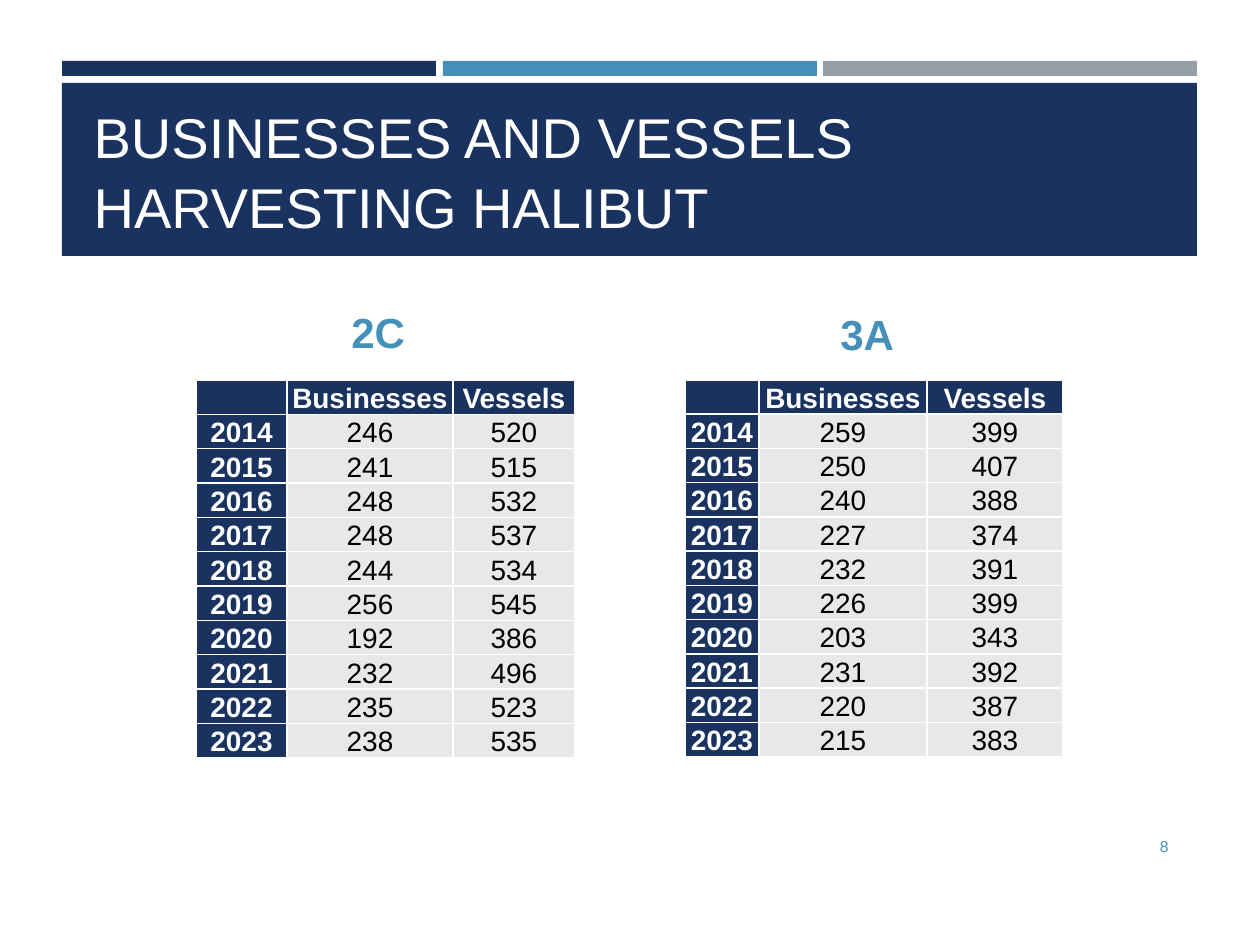
from lxml.etree import SubElement
from pptx import Presentation
from pptx.dml.color import RGBColor
from pptx.enum.shapes import MSO_SHAPE as Shape
from pptx.enum.text import MSO_ANCHOR as Anchor, PP_ALIGN as Align
from pptx.oxml import parse_xml
from pptx.oxml.ns import nsdecls, qn
from pptx.util import Emu, Pt

NAVY, BLUE, GRAY = "1A3260", "4590B8", "969FA7"
PALE, WHITE, BLACK = "E8E8EA", "FFFFFF", "000000"

YEARS = range(2014, 2024)
HARVEST_2C = [(246, 520), (241, 515), (248, 532), (248, 537), (244, 534),
              (256, 545), (192, 386), (232, 496), (235, 523), (238, 535)]
HARVEST_3A = [(259, 399), (250, 407), (240, 388), (227, 374), (232, 391),
              (226, 399), (203, 343), (231, 392), (220, 387), (215, 383)]


def px(length):
    """Turn pixels, at 126 to the inch, into EMU."""
    return Emu(round(length * 914400 / 126))


def color(hex_code):
    return RGBColor.from_string(hex_code)


class SlideBuilder:
    font_name = "Arial"

    def __init__(self, deck):
        self.slide = deck.slides.add_slide(deck.slide_layouts[5])

    def format_text(self, paragraph, size, hex_code, bold=False, align=Align.LEFT):
        paragraph.alignment = align
        for run in paragraph.runs:
            run.font.name = self.font_name
            run.font.size = Pt(size)
            run.font.bold = bold
            run.font.color.rgb = color(hex_code)

    def bar(self, left, top, width, height, fill):
        bar = self.slide.shapes.add_shape(
            Shape.RECTANGLE, px(left), px(top), px(width), px(height))
        bar.shadow.inherit = False
        bar.fill.solid()
        bar.fill.fore_color.rgb = color(fill)
        bar.line.fill.background()

    def title(self, text, left, top, width, height):
        """Fill the title placeholder and bring it in front of the bars."""
        title = self.slide.shapes.title
        title.left, title.top = px(left), px(top)
        title.width, title.height = px(width), px(height)
        frame = title.text_frame
        frame.text = text
        frame.word_wrap = True
        frame.vertical_anchor = Anchor.MIDDLE
        frame.paragraphs[0].line_spacing = 1.04
        self.format_text(frame.paragraphs[0], 32, WHITE)
        title.element.getparent().append(title.element)

    def label(self, text, left, top, width, height, size, anchor, **style):
        frame = self.slide.shapes.add_textbox(
            px(left), px(top), px(width), px(height)).text_frame
        frame.text = text
        frame.word_wrap = True
        frame.vertical_anchor = anchor
        self.format_text(frame.paragraphs[0], size, BLUE, **style)

    def border(self, cell):
        """Draw a thin white line on all four sides of a cell."""
        properties = cell._tc.get_or_add_tcPr()
        for position, side in enumerate(("lnL", "lnR", "lnT", "lnB")):
            line = parse_xml(f'<a:{side} {nsdecls("a")} w="12700"/>')
            fill = SubElement(line, qn("a:solidFill"))
            SubElement(fill, qn("a:srgbClr"), val=WHITE)
            properties.insert(position, line)

    def cell(self, cell, text, is_heading):
        cell.margin_left = cell.margin_right = px(1)
        cell.margin_top = cell.margin_bottom = 0
        cell.vertical_anchor = Anchor.BOTTOM
        cell.fill.solid()
        cell.fill.fore_color.rgb = color(NAVY if is_heading else PALE)
        self.border(cell)
        cell.text_frame.text = text
        paragraph = cell.text_frame.paragraphs[0]
        self.format_text(paragraph, 16, WHITE if is_heading else BLACK,
                         is_heading, Align.CENTER)
        if not text:
            # Keeps the empty corner from stretching the header row.
            SubElement(paragraph._p, qn("a:endParaRPr"), sz="1600")

    def harvest_table(self, left, top, height, column_widths, harvest):
        rows = [("", "Businesses", "Vessels")]
        rows += [(year, *counts) for year, counts in zip(YEARS, harvest)]
        table = self.slide.shapes.add_table(
            len(rows), len(column_widths), px(left), px(top),
            px(sum(column_widths)), px(height)).table
        for column, width in zip(table.columns, column_widths):
            column.width = px(width)
        for r, row in enumerate(rows):
            for c, value in enumerate(row):
                self.cell(table.cell(r, c), str(value), r == 0 or c == 0)


def main():
    deck = Presentation()
    deck.slide_width, deck.slide_height = px(1260), px(945)
    page = SlideBuilder(deck)

    for left, fill in zip((62, 443, 823), (NAVY, BLUE, GRAY)):
        page.bar(left, 61, 374, 15, fill)
    page.bar(62, 83, 1135, 173, NAVY)
    page.title("BUSINESSES AND VESSELS HARVESTING HALIBUT", 81, 95, 1101, 149)

    page.label("2C", 339, 284, 93, 79, 24, Anchor.BOTTOM, bold=True)
    page.harvest_table(196, 380, 378, (91, 166, 122), HARVEST_2C)
    page.label("3A", 828, 286, 93, 79, 24, Anchor.BOTTOM, bold=True)
    page.harvest_table(685, 380, 377, (74, 168, 136), HARVEST_3A)

    page.label("8", 1075, 821, 106, 50, 9, Anchor.MIDDLE, align=Align.RIGHT)
    deck.save("out.pptx")


if __name__ == "__main__":
    main()
